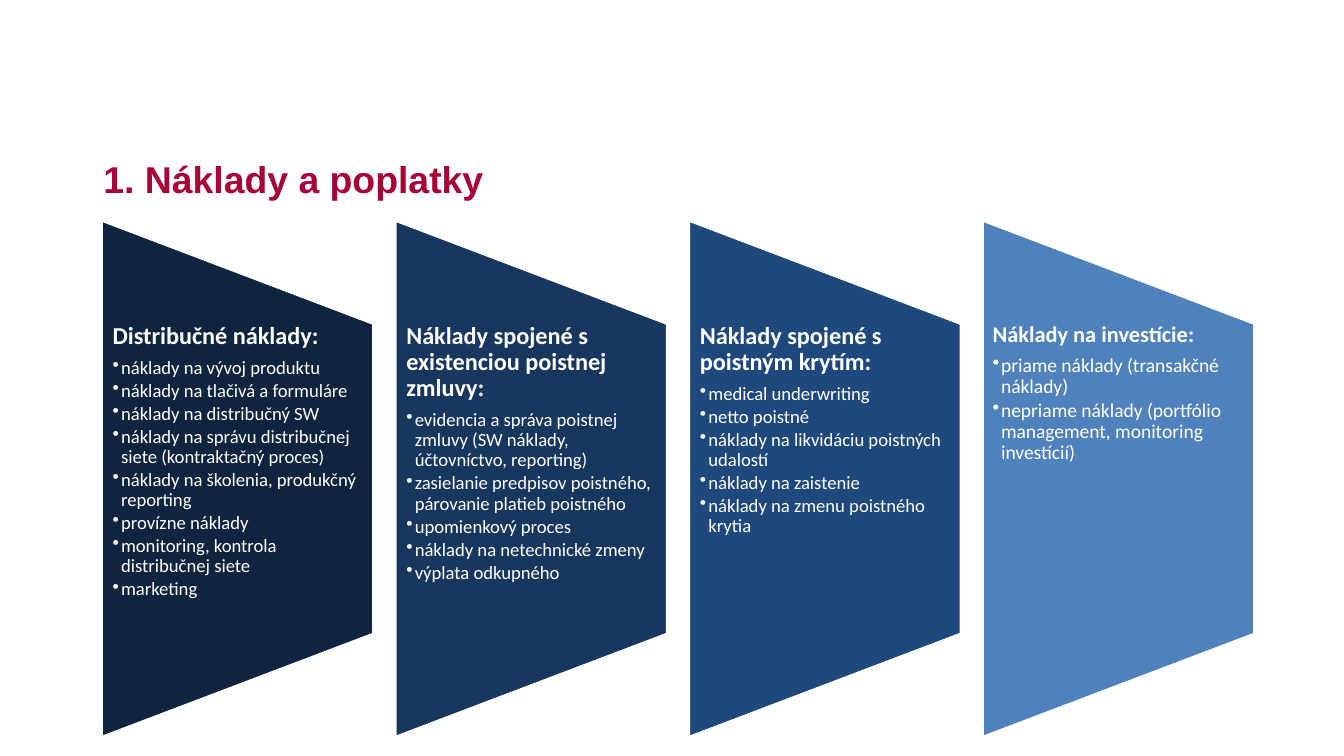
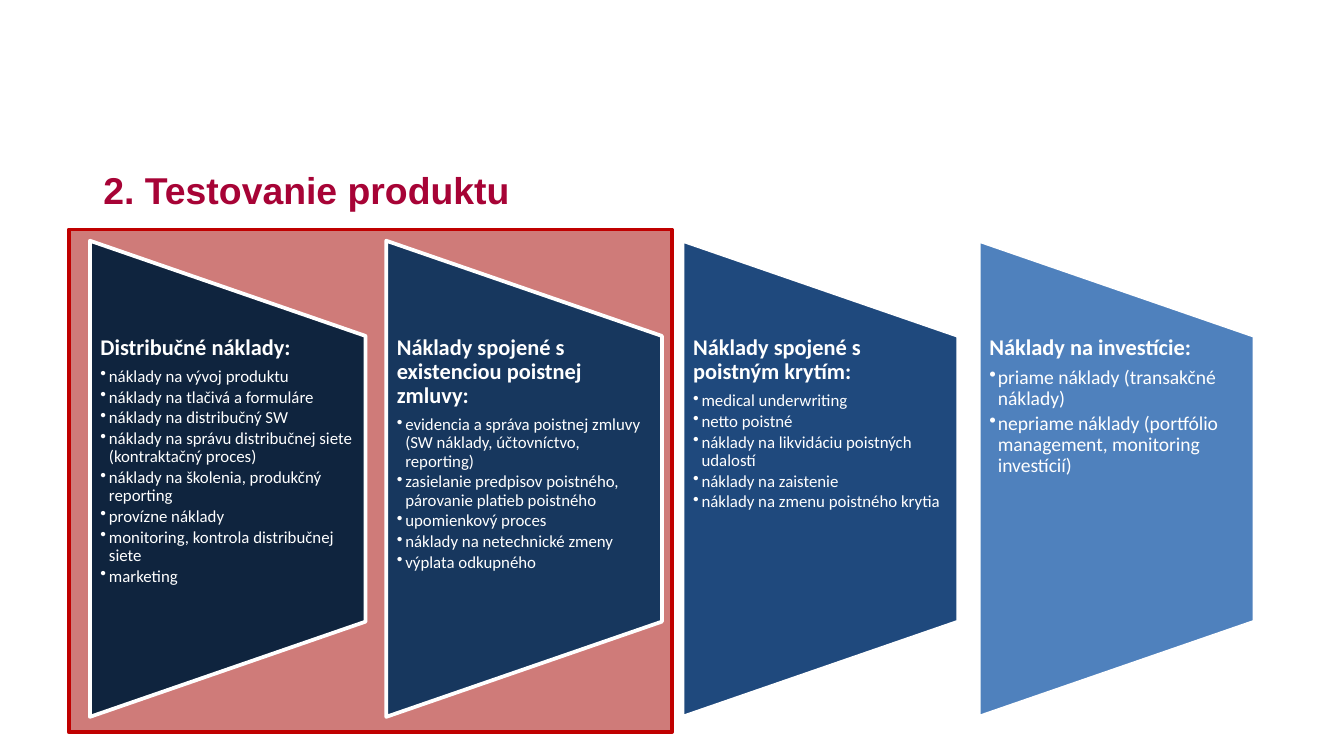
"""Build two slides about insurance costs and product testing."""
import pptx
import pptx.dml.color
import pptx.enum.shapes
import pptx.enum.text
import pptx.util
import lxml.etree
from pptx.oxml.ns import qn

Cm = pptx.util.Cm
Pt = pptx.util.Pt
RGBColor = pptx.dml.color.RGBColor
Shapes = pptx.enum.shapes.MSO_SHAPE

WHITE = RGBColor(0xFF, 0xFF, 0xFF)
CRIMSON = RGBColor(0xA7, 0x03, 0x36)
FRAME_RED = RGBColor(0xC0, 0x00, 0x00)
FRAME_FILL = RGBColor(0xC0, 0x50, 0x4D)
NIGHT = RGBColor(0x0F, 0x24, 0x3E)
NAVY = RGBColor(0x17, 0x37, 0x5E)
ROYAL = RGBColor(0x1F, 0x49, 0x7D)
SKY = RGBColor(0x4F, 0x81, 0xBD)

COST_GROUPS = [
    (NIGHT, "Distribučné náklady:", [
        "náklady na vývoj produktu",
        "náklady na tlačivá a formuláre",
        "náklady na distribučný SW",
        "náklady na správu distribučnej siete (kontraktačný proces)",
        "náklady na školenia, produkčný reporting",
        "provízne náklady",
        "monitoring, kontrola distribučnej siete",
        "marketing",
    ]),
    (NAVY, "Náklady spojené s existenciou poistnej zmluvy:", [
        "evidencia a správa poistnej zmluvy (SW náklady, účtovníctvo, reporting)",
        "zasielanie predpisov poistného, párovanie platieb poistného",
        "upomienkový proces",
        "náklady na netechnické zmeny",
        "výplata odkupného",
    ]),
    (ROYAL, "Náklady spojené s poistným krytím:", [
        "medical underwriting",
        "netto poistné",
        "náklady na likvidáciu poistných udalostí",
        "náklady na zaistenie",
        "náklady na zmenu poistného krytia",
    ]),
    (SKY, "Náklady na investície:", [
        "priame náklady (transakčné náklady)",
        "nepriame náklady (portfólio management, monitoring investícií)",
    ]),
]


class CostDeck:
    def __init__(self):
        self.deck = pptx.Presentation()
        self.deck.slide_width = Cm(25.4)
        self.deck.slide_height = Cm(14.29)
        self.page = None

    def add_page(self, title, top):
        self.page = self.deck.slides.add_slide(self.deck.slide_layouts[5])
        box = self.page.shapes.title
        box.left, box.top, box.width, box.height = Cm(1.7), Cm(top), Cm(22), Cm(0.76)
        frame = box.text_frame
        frame.text = title
        frame.auto_size = pptx.enum.text.MSO_AUTO_SIZE.NONE
        frame.vertical_anchor = pptx.enum.text.MSO_ANCHOR.MIDDLE
        frame.paragraphs[0].alignment = pptx.enum.text.PP_ALIGN.LEFT
        self.style_runs(frame.paragraphs[0], "Arial", 20, CRIMSON, True)

    def style_runs(self, para, name, size, color, bold):
        for span in para.runs:
            span.font.name = name
            span.font.size = Pt(size)
            span.font.bold = bold
            span.font.color.rgb = color

    def add_block(self, parent, preset, left, top, width, height, fill, line):
        block = parent.shapes.add_shape(preset, Cm(left), Cm(top), Cm(width), Cm(height))
        block.shadow.inherit = False
        block.fill.solid()
        block.fill.fore_color.rgb = fill
        block.line.color.rgb = line
        block.line.width = Pt(2)
        return block

    def add_highlight(self, left, top, width, height):
        frame = self.add_block(self.page, Shapes.RECTANGLE, left, top, width, height,
                               FRAME_FILL, FRAME_RED)
        color = frame.fill._xPr.find(qn("a:solidFill"))[0]
        lxml.etree.SubElement(color, qn("a:alpha")).set("val", "75000")
        self.page.shapes.title.element.addprevious(frame.element)

    def add_paragraph(self, para, text, size, is_heading):
        para.text = text
        if not is_heading:
            para.level = 1
            properties = para._p.get_or_add_pPr()
            properties.set("marL", str(Cm(0.16)))
            properties.set("indent", str(-Cm(0.16)))
            lxml.etree.SubElement(properties, qn("a:buChar")).set("char", "•")
        para.alignment = pptx.enum.text.PP_ALIGN.LEFT
        para.line_spacing = 0.9
        para.space_after = Pt(size * (0.35 if is_heading else 0.15))
        self.style_runs(para, "Calibri", size, WHITE, is_heading)

    def add_list(self, parent, left, top, width, height, heading, items, sizes):
        heading_size, item_size, inset = sizes
        box = parent.shapes.add_textbox(Cm(left), Cm(top), Cm(width), Cm(height))
        frame = box.text_frame
        frame.word_wrap = True
        frame.margin_left = frame.margin_right = Cm(inset)
        frame.margin_top = frame.margin_bottom = 0
        self.add_paragraph(frame.paragraphs[0], heading, heading_size, True)
        for item in items:
            self.add_paragraph(frame.add_paragraph(), item, item_size, False)

    def add_cost_panels(self, first_left, pitch, width, height, sizes, last_sizes):
        middle = 9.05
        list_height = height * 0.6
        group = self.page.shapes.add_group_shape()
        for index, (color, heading, items) in enumerate(COST_GROUPS):
            left = first_left + index * pitch
            panel = self.add_block(group, Shapes.FLOWCHART_MANUAL_OPERATION,
                                   left + (width - height) / 2, middle - width / 2,
                                   height, width, color, WHITE)
            panel.rotation = 270
            is_last = index == len(COST_GROUPS) - 1
            self.add_list(group, left, middle - list_height / 2, width, list_height,
                          heading, items, last_sizes if is_last else sizes)


def main():
    show = CostDeck()
    investment_sizes = (12, 10.5, 0.2)

    show.add_page("1. Náklady a poplatky", 3)
    show.add_cost_panels(1.91, 5.55, 5.16, 9.8, (13, 10, 0.22), investment_sizes)

    show.add_page("2. Testovanie produktu", 3.2)
    show.add_highlight(1.3, 4.34, 11.4, 9.5)
    show.add_cost_panels(1.7, 5.6, 5.21, 9, (12, 9, 0.2), investment_sizes)

    show.deck.save("out.pptx")


if __name__ == "__main__":
    main()
